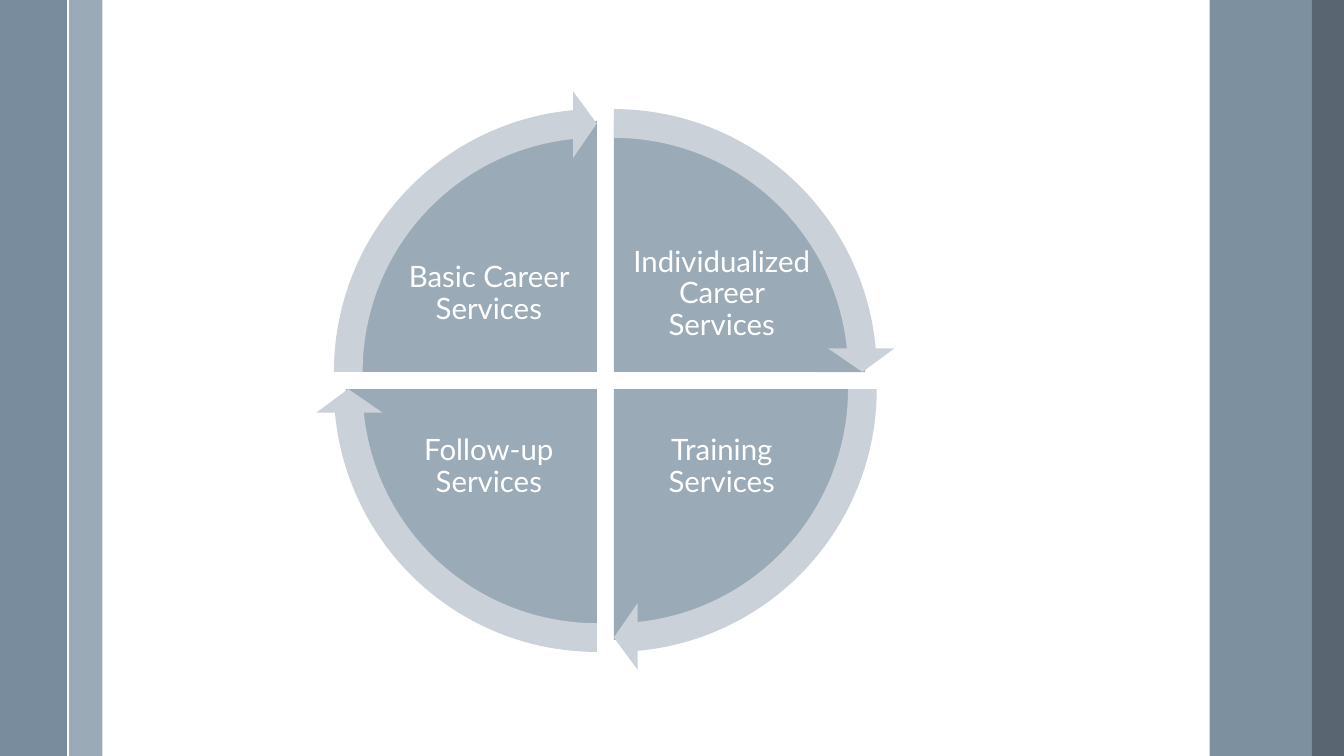
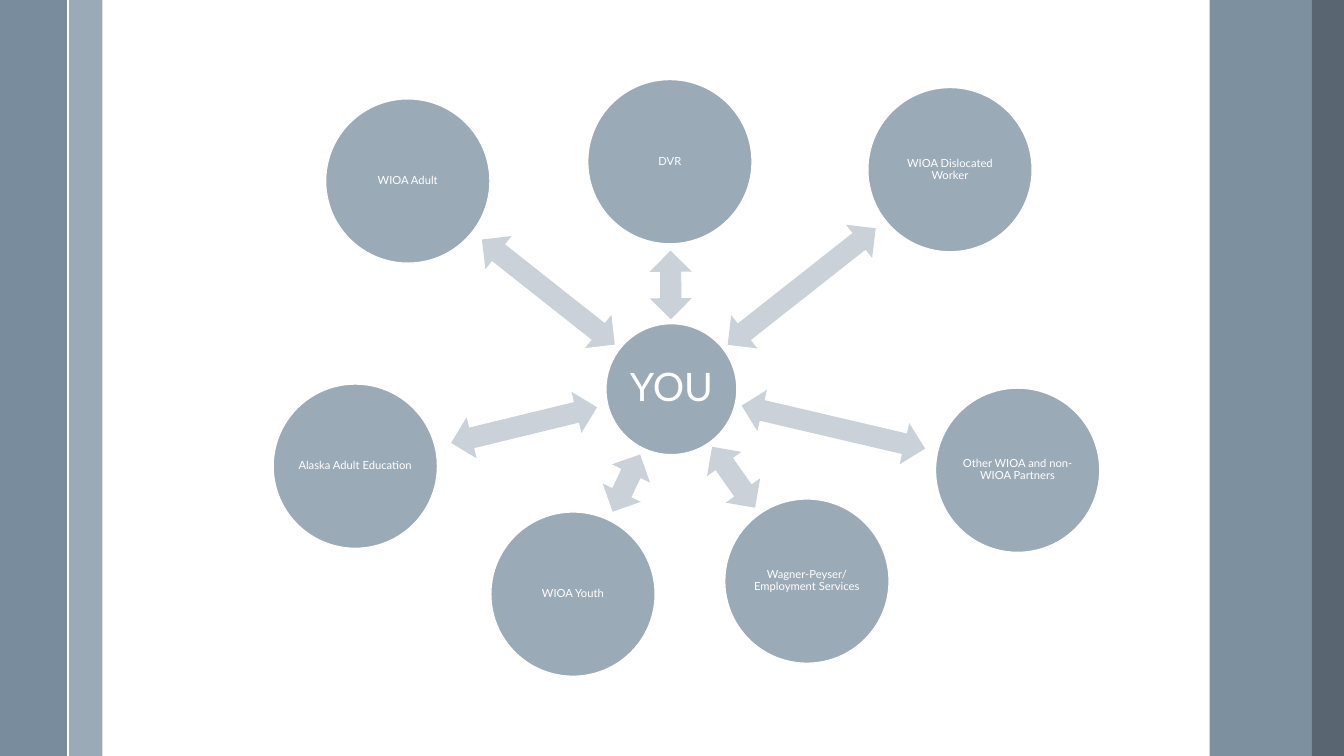
"""Build two slides: a cycle of career services and the partners around you."""
from dataclasses import dataclass
from math import atan2, cos, degrees, hypot, sin

from lxml.etree import SubElement
from pptx import Presentation
from pptx.dml.color import RGBColor
from pptx.enum.shapes import MSO_CONNECTOR, MSO_SHAPE
from pptx.enum.text import MSO_ANCHOR, PP_ALIGN
from pptx.oxml.ns import qn
from pptx.shapes.autoshape import Shape
from pptx.slide import Slide
from pptx.util import Pt

WHITE = RGBColor(0xFF, 0xFF, 0xFF)
MIST = RGBColor(0x9B, 0xAA, 0xB7)
PALE = RGBColor(0xCB, 0xD1, 0xD8)
STEEL = RGBColor(0x6A, 0x80, 0x93)
SLATE = RGBColor(0x47, 0x55, 0x62)
FONT = "Lato"
SLIDE_WIDTH, SLIDE_HEIGHT = 960, 540
DIVIDER_X = 48.5

CYCLE_X, CYCLE_Y = 432.4, 271.8
CYCLE_OFFSET = 6.1
PIE_SIZE, RING_SIZE = 358.5, 402.5
LABEL_WIDTH, LABEL_HEIGHT = 132.5, 98
LABEL_OFFSET_X, LABEL_OFFSET_Y = 83.2, 61.6
FULL_TURN, QUARTER_TURN, RING_SWEEP = 216, 54, 50.725

HUB_X, HUB_Y, HUB_SIZE = 479.6, 278, 93.6
PARTNER_SIZE = 117.4
ARROW_THICKNESS = 30.2
ARROW_POSITION = 0.485


@dataclass(frozen=True)
class Band:
    left: float
    width: float
    color: RGBColor
    opacity: int


@dataclass(frozen=True)
class Quadrant:
    label: str
    side_x: int
    side_y: int
    start: int


@dataclass(frozen=True)
class Partner:
    label: str
    x: float
    y: float
    arrow_length: float


BANDS = (
    Band(49, 24.2, MIST, 100),
    Band(0, 48.2, STEEL, 90),
    Band(864, 72.8, STEEL, 87),
    Band(936.8, 23.2, SLATE, 90),
)
QUADRANTS = (
    Quadrant("Individualized Career Services", 1, -1, 162),
    Quadrant("Training Services", 1, 1, 0),
    Quadrant("Follow-up Services", -1, 1, 54),
    Quadrant("Basic Career Services", -1, -1, 108),
)
PARTNERS = (
    Partner("Wagner-Peyser/Employment Services", 576.4, 415.1, 53.3),
    Partner("WIOA Dislocated Worker", 678.6, 121.2, 134.6),
    Partner("Other WIOA and non-WIOA Partners", 726.9, 335.9, 134.6),
    Partner("DVR", 478.5, 115.5, 49),
    Partner("WIOA Youth", 409.3, 424.4, 45.4),
    Partner("Alaska Adult Education", 253.8, 333, 107.3),
    Partner("WIOA Adult", 291.3, 129.3, 121),
)


def add_filled(slide: Slide, kind: MSO_SHAPE, x: float, y: float,
               width: float, height: float, color: RGBColor) -> Shape:
    """Add a borderless shape centred on x and y."""
    shape = slide.shapes.add_shape(
        kind, Pt(x - width / 2), Pt(y - height / 2), Pt(width), Pt(height))
    shape.shadow.inherit = False
    shape.fill.solid()
    shape.fill.fore_color.rgb = color
    shape.line.fill.background()
    return shape


def write_label(shape: Shape, text: str, size: float, inset: float) -> None:
    """Write centred white text in a shape."""
    frame = shape.text_frame
    frame.word_wrap = True
    frame.vertical_anchor = MSO_ANCHOR.MIDDLE
    frame.margin_left = frame.margin_right = Pt(inset)
    frame.margin_top = frame.margin_bottom = Pt(inset)
    paragraph = frame.paragraphs[0]
    paragraph.text = text
    paragraph.alignment = PP_ALIGN.CENTER
    paragraph.line_spacing = 0.9
    paragraph.font.name = FONT
    paragraph.font.size = Pt(size)
    paragraph.font.color.rgb = WHITE


def add_frame(slide: Slide) -> None:
    """Draw the side bands and the divider."""
    for band in BANDS:
        shape = add_filled(slide, MSO_SHAPE.RECTANGLE, band.left + band.width / 2,
                           SLIDE_HEIGHT / 2, band.width, SLIDE_HEIGHT, band.color)
        if band.opacity < 100:
            color = shape.element.spPr.find(f"{qn('a:solidFill')}/{qn('a:srgbClr')}")
            SubElement(color, qn("a:alpha"), val=str(band.opacity * 1000))
    divider = slide.shapes.add_connector(
        MSO_CONNECTOR.STRAIGHT, Pt(DIVIDER_X), Pt(0), Pt(DIVIDER_X), Pt(SLIDE_HEIGHT))
    divider.line.color.rgb = WHITE
    divider.line.width = Pt(1.5)
    SubElement(divider.element.spPr, qn("a:effectLst"))


def add_quadrant(slide: Slide, quadrant: Quadrant) -> None:
    """Draw one quarter of the cycle with its label."""
    pie = add_filled(slide, MSO_SHAPE.PIE,
                     CYCLE_X + quadrant.side_x * CYCLE_OFFSET,
                     CYCLE_Y + quadrant.side_y * CYCLE_OFFSET,
                     PIE_SIZE, PIE_SIZE, MIST)
    pie.adjustments[0] = quadrant.start
    pie.adjustments[1] = (quadrant.start + QUARTER_TURN) % FULL_TURN
    label = slide.shapes.add_textbox(
        Pt(CYCLE_X + quadrant.side_x * LABEL_OFFSET_X - LABEL_WIDTH / 2),
        Pt(CYCLE_Y + quadrant.side_y * LABEL_OFFSET_Y - LABEL_HEIGHT / 2),
        Pt(LABEL_WIDTH), Pt(LABEL_HEIGHT))
    write_label(label, quadrant.label, 21, 2.2)


def add_ring_arrow(slide: Slide, quadrant: Quadrant) -> None:
    """Draw the curved arrow around one quarter."""
    arrow = add_filled(slide, MSO_SHAPE.CIRCULAR_ARROW,
                       CYCLE_X + quadrant.side_x * CYCLE_OFFSET,
                       CYCLE_Y + quadrant.side_y * CYCLE_OFFSET,
                       RING_SIZE, RING_SIZE, PALE)
    values = (0.051, 3.275, quadrant.start + RING_SWEEP, quadrant.start, 0.059)
    for index, value in enumerate(values):
        arrow.adjustments[index] = value


def add_circle(slide: Slide, text: str, x: float, y: float,
               diameter: float, size: float, inset: float) -> None:
    """Draw a labelled circle with a white outline."""
    circle = add_filled(slide, MSO_SHAPE.OVAL, x, y, diameter, diameter, MIST)
    circle.line.color.rgb = WHITE
    circle.line.width = Pt(1)
    write_label(circle, text, size, inset)


def add_partner(slide: Slide, partner: Partner) -> None:
    """Draw a partner and the arrow that points from the hub to it."""
    across, down = partner.x - HUB_X, partner.y - HUB_Y
    angle = atan2(down, across)
    gap = hypot(across, down) - (HUB_SIZE + PARTNER_SIZE) / 2
    reach = HUB_SIZE / 2 + gap * ARROW_POSITION
    arrow = add_filled(slide, MSO_SHAPE.LEFT_RIGHT_ARROW,
                       HUB_X + reach * cos(angle), HUB_Y + reach * sin(angle),
                       partner.arrow_length, ARROW_THICKNESS, PALE)
    arrow.rotation = degrees(angle)
    add_circle(slide, partner.label, partner.x, partner.y, PARTNER_SIZE, 8, 0.7)


def main() -> None:
    """Build and save the presentation."""
    presentation = Presentation()
    presentation.slide_width = Pt(SLIDE_WIDTH)
    presentation.slide_height = Pt(SLIDE_HEIGHT)
    blank = presentation.slide_layouts[6]

    cycle_slide = presentation.slides.add_slide(blank)
    add_frame(cycle_slide)
    for quadrant in QUADRANTS:
        add_quadrant(cycle_slide, quadrant)
    for quadrant in QUADRANTS:
        add_ring_arrow(cycle_slide, quadrant)

    partner_slide = presentation.slides.add_slide(blank)
    add_frame(partner_slide)
    add_circle(partner_slide, "YOU", HUB_X, HUB_Y, HUB_SIZE, 28, 2.9)
    for partner in PARTNERS:
        add_partner(partner_slide, partner)

    presentation.save("out.pptx")


if __name__ == "__main__":
    main()
